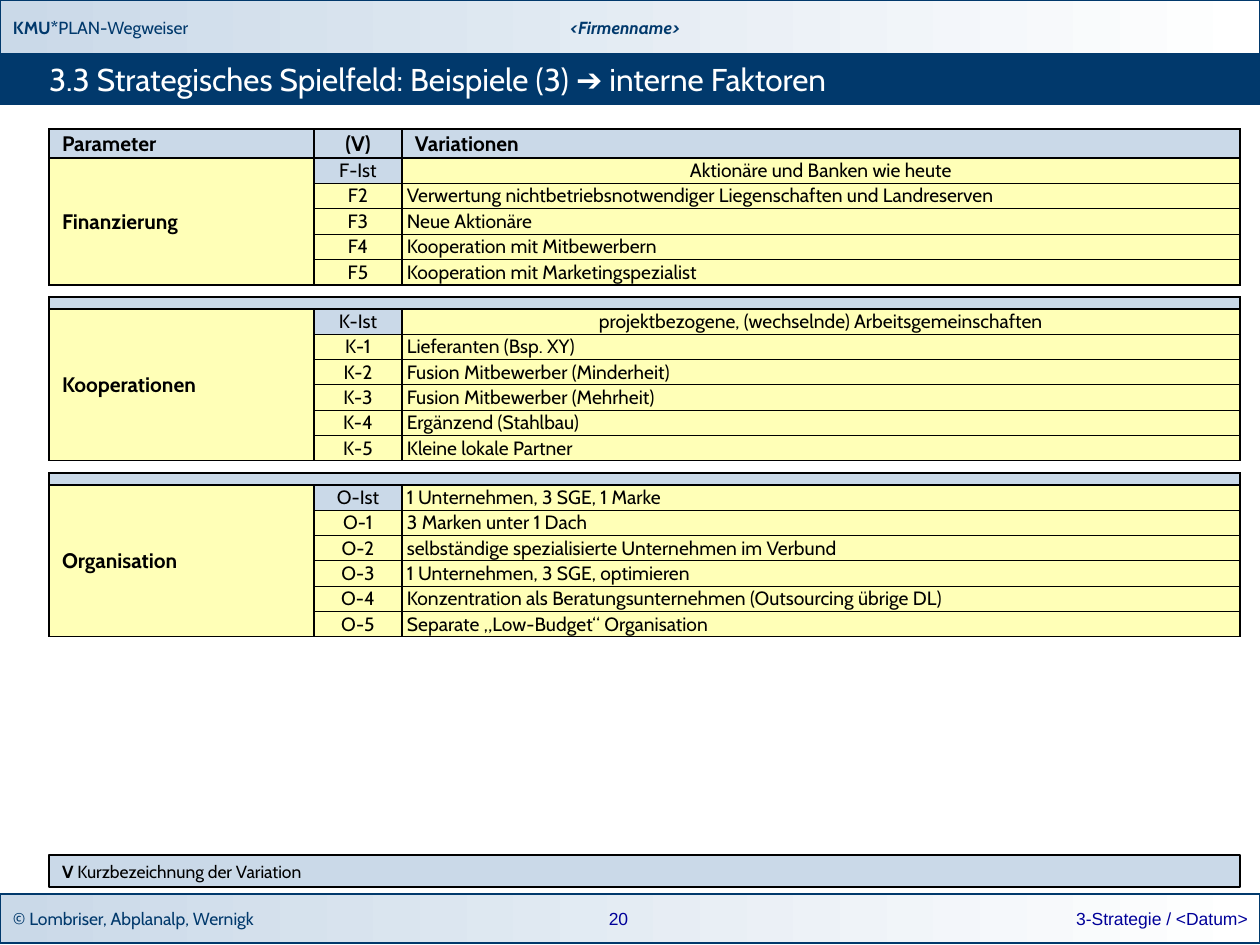
"""Build the slide on internal factors of the strategic playing field."""
from pptx import Presentation
from pptx.dml.color import RGBColor
from pptx.enum.shapes import MSO_SHAPE as Shape
from pptx.enum.text import MSO_ANCHOR as Anchor, MSO_AUTO_SIZE as AutoSize, PP_ALIGN as Align
from pptx.oxml import parse_xml
from pptx.oxml.ns import nsdecls
from pptx.util import Pt

NAVY = RGBColor(0x01, 0x39, 0x6C)
PALE_BLUE = RGBColor(0xCA, 0xD9, 0xE8)
YELLOW = RGBColor(0xFF, 0xFF, 0xB7)
FOOTER_BLUE = RGBColor(0x00, 0x00, 0x99)
BLACK = RGBColor(0, 0, 0)
WHITE = RGBColor(255, 255, 255)

TITLE = "3.3 Strategisches Spielfeld: Beispiele (3) ➔ interne Faktoren"
HEADINGS = ("Parameter", "(V)", "Variationen")
FACTORS = [
    {"name": "Finanzierung", "top": 129, "head": 29, "body": 127, "headings": HEADINGS,
     "centred_first": True, "variations": [
         ("F-Ist", "Aktionäre und Banken wie heute"),
         ("F2", "Verwertung nichtbetriebsnotwendiger Liegenschaften und Landreserven"),
         ("F3", "Neue Aktionäre"),
         ("F4", "Kooperation mit Mitbewerbern"),
         ("F5", "Kooperation mit Marketingspezialist")]},
    {"name": "Kooperationen", "top": 297, "head": 12, "body": 152, "headings": ("", "", ""),
     "centred_first": True, "variations": [
         ("K-Ist", "projektbezogene, (wechselnde) Arbeitsgemeinschaften"),
         ("K-1", "Lieferanten (Bsp. XY)"),
         ("K-2", "Fusion Mitbewerber (Minderheit)"),
         ("K-3", "Fusion Mitbewerber (Mehrheit)"),
         ("K-4", "Ergänzend (Stahlbau)"),
         ("K-5", "Kleine lokale Partner")]},
    {"name": "Organisation", "top": 473, "head": 12, "body": 152, "headings": ("", "", ""),
     "centred_first": False, "variations": [
         ("O-Ist", "1 Unternehmen, 3 SGE, 1 Marke"),
         ("O-1", "3 Marken unter 1 Dach"),
         ("O-2", "selbständige spezialisierte Unternehmen im Verbund"),
         ("O-3", "1 Unternehmen, 3 SGE, optimieren"),
         ("O-4", "Konzentration als Beratungsunternehmen (Outsourcing übrige DL)"),
         ("O-5", "Separate „Low-Budget“ Organisation")]},
]
COLUMNS = (265, 88, 838)
LEFT, WIDTH = 49, sum(COLUMNS)
WIDE, NARROW = 13, 5


def px(length):
    return round(length * 914400 / 126)


def write(frame, *runs, size=10, font="Cabin", color=BLACK, bold=False, italic=False,
          align=Align.LEFT):
    """Fill the first paragraph; a run is a text or a (text, bold) pair."""
    paragraph = frame.paragraphs[0]
    paragraph.alignment = align
    for item in runs:
        text, strong = (item, bold) if isinstance(item, str) else item
        run = paragraph.add_run()
        run.text = text
        run.font.size, run.font.name = Pt(size), font
        run.font.bold, run.font.italic = strong, italic
        run.font.color.rgb = color


def set_insets(target, side, vertical=0):
    target.margin_left = target.margin_right = px(side)
    target.margin_top = target.margin_bottom = px(vertical)


def add_bar(slide, left, top, width, height, fill, line=NAVY, gradient=False):
    bar = slide.shapes.add_shape(Shape.RECTANGLE, px(left), px(top), px(width), px(height))
    bar.shadow.inherit = False
    if gradient:
        bar.fill.gradient()
        bar.fill.gradient_angle = 0
        for stop, color in zip(bar.fill.gradient_stops, (fill, WHITE)):
            stop.color.rgb = color
    else:
        bar.fill.solid()
        bar.fill.fore_color.rgb = fill
    bar.line.color.rgb, bar.line.width = line, Pt(0.75)
    frame = bar.text_frame
    frame.word_wrap, frame.vertical_anchor = True, Anchor.MIDDLE
    set_insets(frame, WIDE, NARROW)
    return frame


def add_label(slide, left, top, width, height, text, **style):
    frame = slide.shapes.add_textbox(px(left), px(top), px(width), px(height)).text_frame
    frame.word_wrap, frame.vertical_anchor = True, Anchor.MIDDLE
    write(frame, text, **style)


def format_cell(cell, text, fill, inset, sides="LRTB", **style):
    cell.vertical_anchor = Anchor.MIDDLE
    set_insets(cell, inset)
    properties = cell._tc.get_or_add_tcPr()
    for side in "LRTB":
        paint = (f'<a:solidFill><a:srgbClr val="{BLACK}"/></a:solidFill>'
                 if side in sides else "<a:noFill/>")
        properties.append(parse_xml(
            f'<a:ln{side} {nsdecls("a")} w="{Pt(0.75)}">{paint}</a:ln{side}>'))
    cell.fill.solid()
    cell.fill.fore_color.rgb = fill
    if text:
        write(cell.text_frame, text, **style)
    else:
        cell.text_frame.paragraphs[0]._p.get_or_add_endParaRPr().set("sz", "100")


def add_factor_table(slide, factor):
    variations = factor["variations"]
    count = len(variations)
    table = slide.shapes.add_table(count + 1, 3, px(LEFT), px(factor["top"]), px(WIDTH),
                                   px(factor["head"] + factor["body"])).table
    table.first_row = table.horz_banding = False
    for column, width in zip(table.columns, COLUMNS):
        column.width = px(width)
    for index, row in enumerate(table.rows):
        row.height = px(factor["body"] / count if index else factor["head"])

    headings = factor["headings"]
    head_sides = ("LRTB",) * 3 if any(headings) else ("LTB", "TB", "RTB")
    for index, (text, sides) in enumerate(zip(headings, head_sides)):
        format_cell(table.cell(0, index), text, PALE_BLUE, WIDE, sides, size=12, bold=True,
                    align=Align.CENTER if index == 1 else Align.LEFT)

    table.cell(1, 0).merge(table.cell(count, 0))
    for row, (code, variation) in enumerate(variations, 1):
        first = row == 1
        format_cell(table.cell(row, 0), factor["name"] if first else "", YELLOW, WIDE,
                    size=12, bold=True)
        format_cell(table.cell(row, 1), code, PALE_BLUE if first else YELLOW, NARROW,
                    size=11, align=Align.CENTER)
        centred = first and factor["centred_first"]
        format_cell(table.cell(row, 2), variation, YELLOW, NARROW, size=11,
                    align=Align.CENTER if centred else Align.LEFT)


def add_title(slide):
    title = slide.shapes.title
    title.left, title.top, title.width, title.height = map(px, (LEFT, 54, 1171, 50))
    frame = title.text_frame
    frame.auto_size, frame.vertical_anchor = AutoSize.NONE, Anchor.MIDDLE
    set_insets(frame, 0)
    write(frame, TITLE, size=18, color=WHITE)
    slide.shapes._spTree.append(title._element)


def main():
    presentation = Presentation()
    presentation.slide_width, presentation.slide_height = px(1260), px(945)
    slide = presentation.slides.add_slide(presentation.slide_layouts[5])

    footer = add_bar(slide, 0, 894, 1260, 49, PALE_BLUE, gradient=True)
    write(footer, "© Lombriser, Abplanalp, Wernigk", color=NAVY)
    header = add_bar(slide, 0, 0, 1260, 54, PALE_BLUE, gradient=True)
    write(header, ("KMU*", True), "PLAN-Wegweiser", color=NAVY)
    add_bar(slide, 0, 54, 1260, 50, NAVY)
    add_label(slide, 402, 0, 446, 55, "<Firmenname>", color=NAVY, bold=True, italic=True,
              align=Align.CENTER)
    add_label(slide, 861, 894, 399, 50, "3-Strategie / <Datum>", font="Arial",
              color=FOOTER_BLUE, align=Align.RIGHT)
    add_label(slide, 588, 894, 61, 49, "20", font="Arial", color=FOOTER_BLUE,
              align=Align.CENTER)
    add_title(slide)

    for factor in FACTORS:
        add_factor_table(slide, factor)
    legend = add_bar(slide, LEFT, 855, WIDTH, 32, PALE_BLUE, line=BLACK)
    write(legend, ("V", True), " Kurzbezeichnung der Variation")
    presentation.save("out.pptx")


if __name__ == "__main__":
    main()
